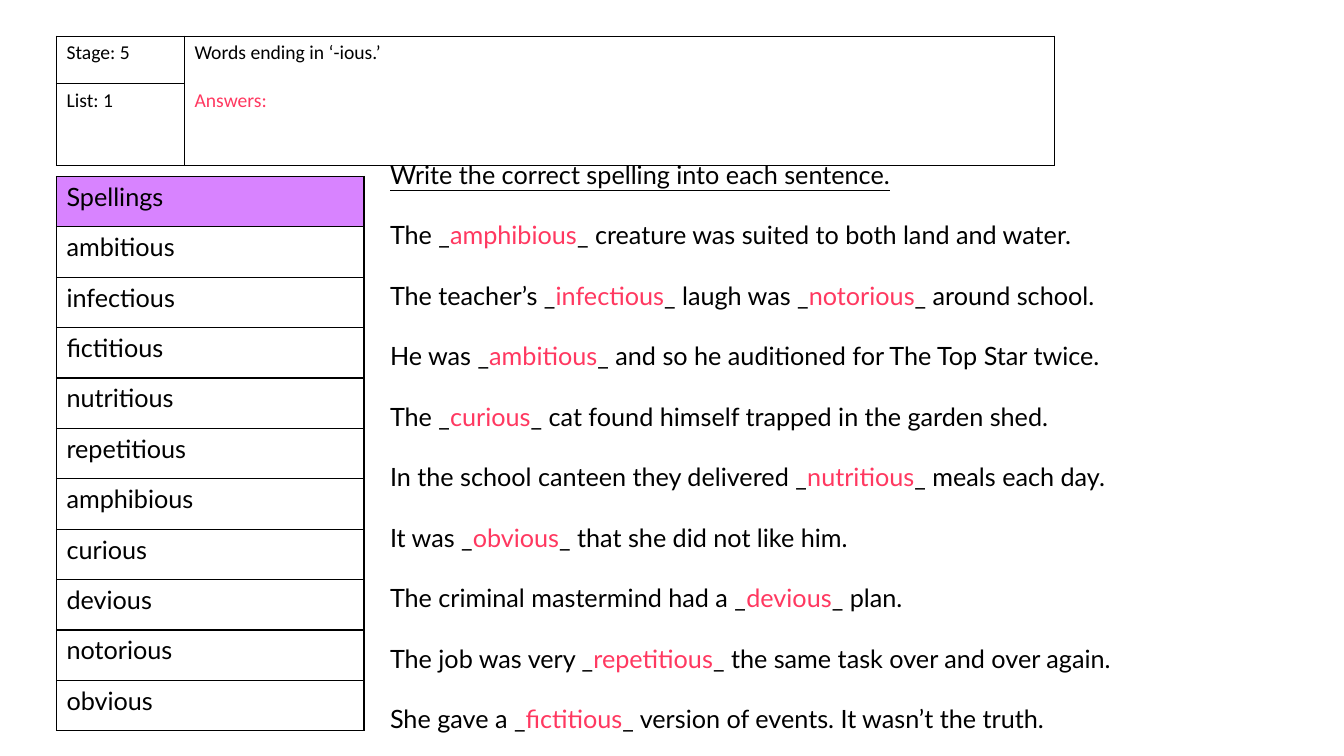
from lxml import etree
from pptx import Presentation
from pptx.dml.color import RGBColor
from pptx.oxml.ns import qn
from pptx.util import Inches, Pt

BLACK = RGBColor(0x00, 0x00, 0x00)
ANSWER_PINK = RGBColor(0xFF, 0x38, 0x60)
HEADER_PURPLE = RGBColor(0xD8, 0x83, 0xFF)

STAGE, LIST_NUMBER = "Stage: 5", "List: 1"
TOPIC = ["Words ending in ‘-ious.’", "Answers:"]
SPELLINGS = [
    "Spellings", "ambitious", "infectious", "fictitious", "nutritious", "repetitious",
    "amphibious", "curious", "devious", "notorious", "obvious",
]
INSTRUCTION = "Write the correct spelling into each sentence."
# Each answer stands between two underscores.
SENTENCES = [
    "The _amphibious_ creature was suited to both land and water.",
    "The teacher’s _infectious_ laugh was _notorious_ around school.",
    "He was _ambitious_ and so he auditioned for The Top Star twice.",
    "The _curious_ cat found himself trapped in the garden shed.",
    "In the school canteen they delivered _nutritious_ meals each day.",
    "It was _obvious_ that she did not like him.",
    "The criminal mastermind had a _devious_ plan.",
    "The job was very _repetitious_ the same task over and over again.",
    "She gave a _fictitious_ version of events. It wasn’t the truth.",
]

SLIDE_WIDTH, SLIDE_HEIGHT = 13.33, 7.5
LEFT = 0.56
HEADER_TOP, HEADER_COLUMNS, HEADER_ROWS = 0.36, [1.27, 8.63], [0.47, 0.81]
SPELLINGS_TOP, SPELLINGS_COLUMNS = 1.75, [3.05]
SPELLINGS_ROWS = [0.5] * len(SPELLINGS)
SENTENCES_LEFT, SENTENCES_TOP, SENTENCES_HEIGHT = 3.77, 1.53, 5.8
HEADER_GAP, SENTENCE_GAP = Pt(17.1), Pt(21.6)


def style_font(font, name, size, color=BLACK):
    font.name = name
    font.size = Pt(size)
    font.color.rgb = color


def add_borders(cell):
    properties = cell._tc.get_or_add_tcPr()
    for side in ("lnL", "lnR", "lnT", "lnB"):
        line = etree.SubElement(properties, qn(f"a:{side}"), w=str(Pt(1)))
        fill = etree.SubElement(line, qn("a:solidFill"))
        etree.SubElement(fill, qn("a:srgbClr"), val=str(BLACK))


def add_grid(slide, top, columns, rows):
    """Add an unfilled table with black borders at the left margin."""
    table = slide.shapes.add_table(
        len(rows), len(columns), Inches(LEFT), Inches(top),
        Inches(sum(columns)), Inches(sum(rows))).table
    table.first_row = False
    table.horz_banding = False
    for column, width in zip(table.columns, columns):
        column.width = Inches(width)
    for row, height in zip(table.rows, rows):
        row.height = Inches(height)
        for cell in row.cells:
            add_borders(cell)
            cell.fill.background()
    return table


def write_cell(cell, text, font_name, size):
    cell.text_frame.text = text
    for paragraph in cell.text_frame.paragraphs:
        style_font(paragraph.runs[0].font, font_name, size)


def add_header(slide):
    table = add_grid(slide, HEADER_TOP, HEADER_COLUMNS, HEADER_ROWS)
    topic_cell = table.cell(0, 1)
    topic_cell.merge(table.cell(1, 1))
    write_cell(table.cell(0, 0), STAGE, "Calibri", 14)
    write_cell(table.cell(1, 0), LIST_NUMBER, "Calibri", 14)
    write_cell(topic_cell, "\n".join(TOPIC), "Calibri", 14)
    answers = topic_cell.text_frame.paragraphs[1]
    answers.space_before = HEADER_GAP
    answers.runs[0].font.color.rgb = ANSWER_PINK


def add_spellings(slide):
    table = add_grid(slide, SPELLINGS_TOP, SPELLINGS_COLUMNS, SPELLINGS_ROWS)
    for row, word in enumerate(SPELLINGS):
        write_cell(table.cell(row, 0), word, "Lato", 18)
    heading_fill = table.cell(0, 0).fill
    heading_fill.solid()
    heading_fill.fore_color.rgb = HEADER_PURPLE


def add_sentence(text_frame, sentence):
    paragraph = text_frame.add_paragraph()
    paragraph.space_before = SENTENCE_GAP
    parts = sentence.split("_")
    for index, part in enumerate(parts):
        is_answer = index % 2 == 1
        run = paragraph.add_run()
        if is_answer:
            run.text = part
        else:
            opening = "_" if index > 0 else ""
            closing = "_" if index < len(parts) - 1 else ""
            run.text = opening + part + closing
        style_font(run.font, "Lato", 18, ANSWER_PINK if is_answer else BLACK)


def add_sentences(slide):
    text_frame = slide.shapes.add_textbox(
        Inches(SENTENCES_LEFT), Inches(SENTENCES_TOP),
        Inches(SLIDE_WIDTH - SENTENCES_LEFT), Inches(SENTENCES_HEIGHT)).text_frame
    text_frame.word_wrap = True
    text_frame.text = INSTRUCTION
    instruction_font = text_frame.paragraphs[0].runs[0].font
    style_font(instruction_font, "Lato", 18)
    instruction_font.underline = True
    for sentence in SENTENCES:
        add_sentence(text_frame, sentence)


def main():
    presentation = Presentation()
    presentation.slide_width = Inches(SLIDE_WIDTH)
    presentation.slide_height = Inches(SLIDE_HEIGHT)
    slide = presentation.slides.add_slide(presentation.slide_layouts[6])
    add_spellings(slide)
    add_header(slide)
    add_sentences(slide)
    presentation.save("out.pptx")


if __name__ == "__main__":
    main()
